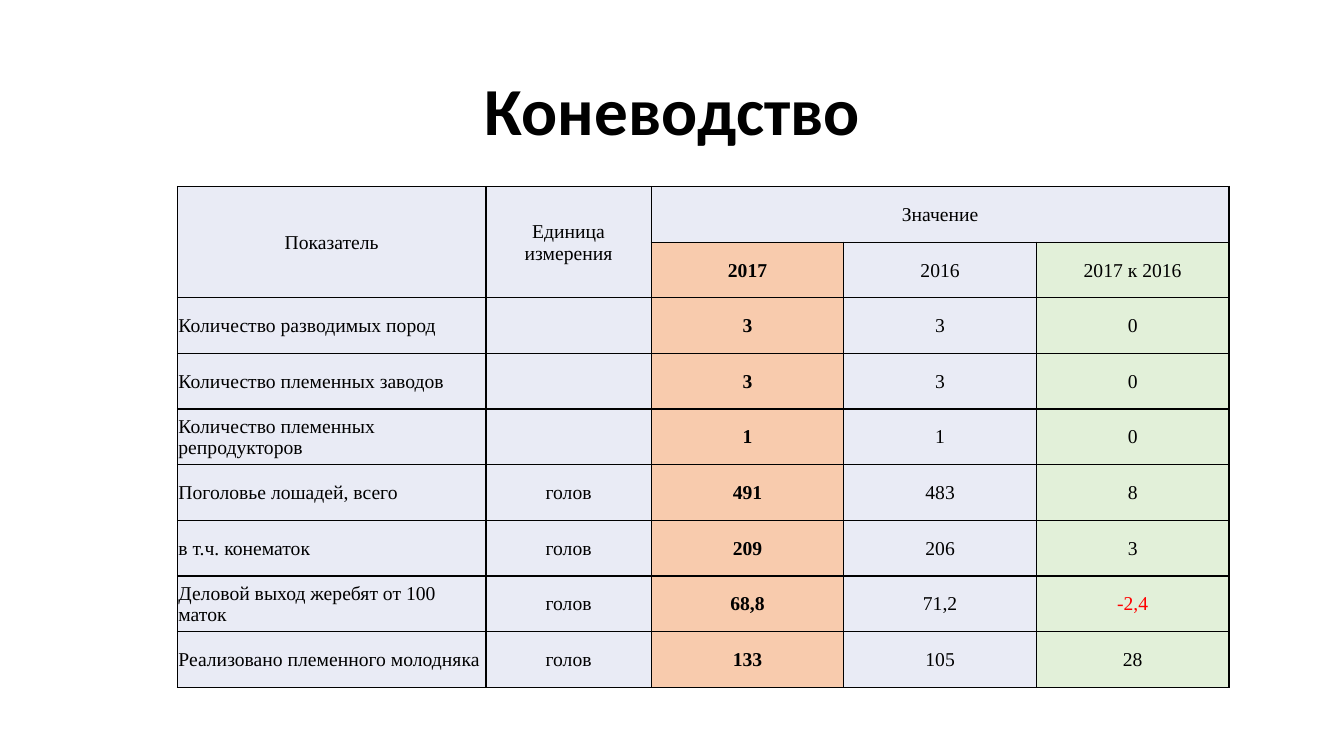
from lxml.etree import SubElement
from pptx import Presentation
from pptx.dml.color import RGBColor
from pptx.enum.text import MSO_ANCHOR, PP_ALIGN
from pptx.oxml.ns import qn
from pptx.util import Inches, Pt

COLORS = {"ink": "000000", "loss": "FF0000", "base": "E9EBF5",
          "year": "F8CBAD", "gain": "E2F0D9"}
WIDTHS = [3.06, 1.64, 1.91, 1.91, 1.91]
FILLS = ["base", "base", "year", "base", "gain"]
HEADS = [["Показатель", "Единица измерения", "Значение", "", ""],
         ["", "", "2017", "2016", "2017 к 2016"]]
ROWS = [
    ["Количество разводимых пород", "", "3", "3", "0"],
    ["Количество племенных заводов", "", "3", "3", "0"],
    ["Количество племенных репродукторов", "", "1", "1", "0"],
    ["Поголовье лошадей, всего", "голов", "491", "483", "8"],
    ["в т.ч. конематок", "голов", "209", "206", "3"],
    ["Деловой выход жеребят от 100 маток", "голов", "68,8", "71,2", "-2,4"],
    ["Реализовано племенного молодняка", "голов", "133", "105", "28"],
]


class Deck:
    """Holds the table style and the current slide."""

    def __init__(self, slide):
        self.slide = slide
        self.font = "Times New Roman"
        self.size = 14

    def color(self, name):
        return RGBColor.from_string(COLORS[name])

    def text(self, para, words, font, size, bold=False, color="ink"):
        run = para.add_run()
        run.text = words
        run.font.name = font
        run.font.size = Pt(size)
        run.font.bold = bold
        run.font.color.rgb = self.color(color)

    def title(self, words):
        shape = self.slide.shapes.title
        shape.left, shape.top = Inches(0.92), Inches(0.4)
        shape.width, shape.height = Inches(11.5), Inches(1.45)
        shape.text_frame.vertical_anchor = MSO_ANCHOR.MIDDLE
        para = shape.text_frame.paragraphs[0]
        para.alignment = PP_ALIGN.CENTER
        para.line_spacing = 0.9
        self.text(para, words, "Calibri", 48, True)

    def border(self, cell):
        props = cell._tc.get_or_add_tcPr()
        for spot, side in enumerate(("lnL", "lnR", "lnT", "lnB")):
            line = props.makeelement(qn(f"a:{side}"), {"w": str(Pt(1))})
            fill = SubElement(line, qn("a:solidFill"))
            SubElement(fill, qn("a:srgbClr"), val=COLORS["ink"])
            props.insert(spot, line)

    def cell(self, cell, words, fill, align, bold):
        cell.fill.solid()
        cell.fill.fore_color.rgb = self.color(fill)
        cell.vertical_anchor = MSO_ANCHOR.MIDDLE
        cell.margin_left = cell.margin_right = cell.margin_top = Inches(0.01)
        cell.margin_bottom = Inches(0)
        self.border(cell)
        para = cell.text_frame.paragraphs[0]
        para.alignment = align
        para.font.size = Pt(self.size)
        if words:
            color = "loss" if words.startswith("-") else "ink"
            self.text(para, words, self.font, self.size, bold, color)

    def table(self, heads, rows):
        data = heads + rows
        frame = self.slide.shapes.add_table(
            len(data), len(WIDTHS), Inches(1.76), Inches(1.85),
            Inches(sum(WIDTHS)), Inches(4.97))
        table = frame.table
        table.first_row = table.horz_banding = False
        for col, width in zip(table.columns, WIDTHS):
            col.width = Inches(width)
        for r, row in enumerate(data):
            for c, words in enumerate(row):
                fill = FILLS[c] if r else "base"
                left = c == 0 and r >= len(heads)
                align = PP_ALIGN.LEFT if left else PP_ALIGN.CENTER
                self.cell(table.cell(r, c), words, fill, align, fill == "year")
        for c in (0, 1):
            table.cell(0, c).merge(table.cell(1, c))
        table.cell(0, 2).merge(table.cell(0, 4))


def main():
    show = Presentation()
    show.slide_width, show.slide_height = Inches(13.33), Inches(7.5)
    deck = Deck(show.slides.add_slide(show.slide_layouts[5]))
    deck.title("Коневодство")
    deck.table(HEADS, ROWS)
    show.save("out.pptx")


if __name__ == "__main__":
    main()
